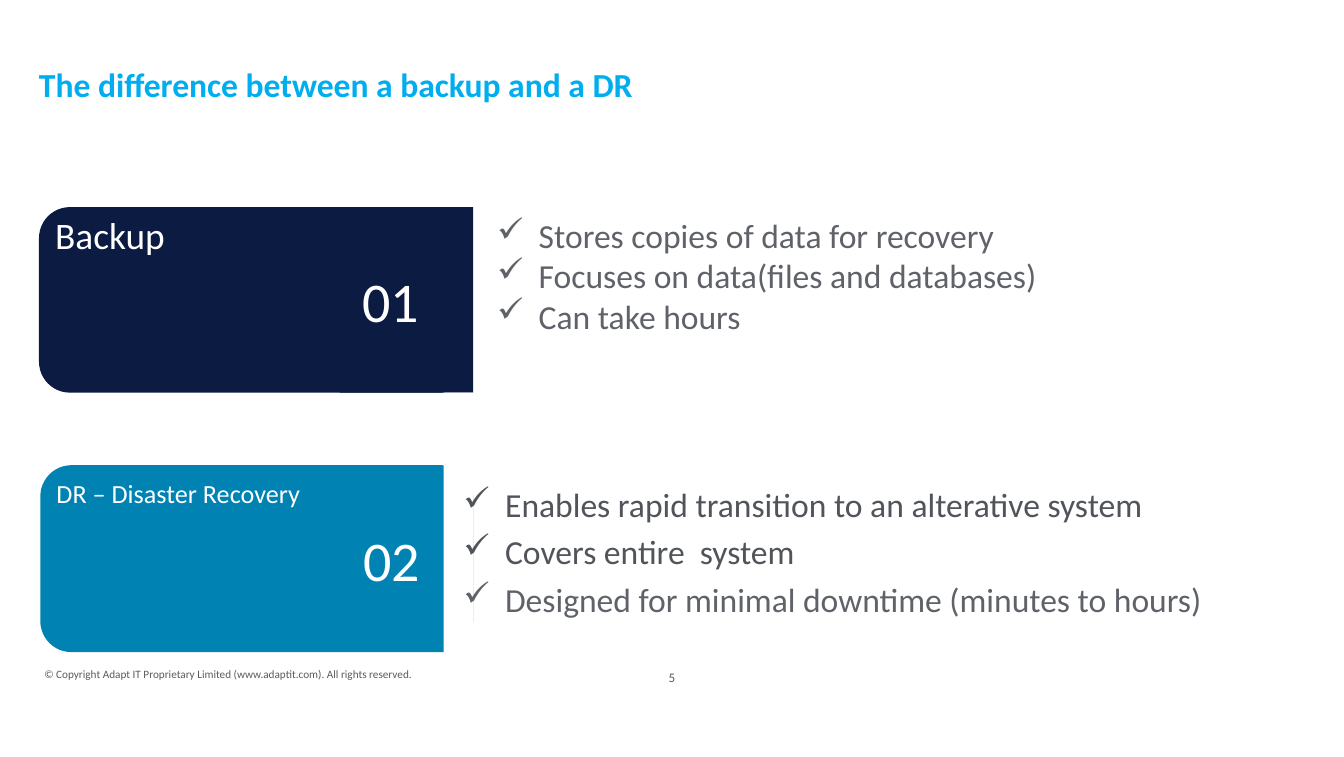
from dataclasses import dataclass

import lxml.etree
import pptx
import pptx.dml.color
import pptx.enum.shapes
import pptx.enum.text
import pptx.oxml.ns
import pptx.slide
import pptx.util

Inches = pptx.util.Inches
RGBColor = pptx.dml.color.RGBColor
Shape = pptx.enum.shapes.MSO_SHAPE
Align = pptx.enum.text.PP_ALIGN
Anchor = pptx.enum.text.MSO_ANCHOR

NAVY = RGBColor(0x0B, 0x1B, 0x42)
TEAL = RGBColor(0x00, 0x83, 0xB3)
SKY = RGBColor(0x00, 0xAE, 0xEF)
WHITE = RGBColor(0xFF, 0xFF, 0xFF)
SLATE = RGBColor(0x51, 0x55, 0x5B)
GREY = RGBColor(0x5F, 0x63, 0x69)
FOOTER_GREY = RGBColor(0x58, 0x5C, 0x5E)

FONT = "Calibri"
HANGING = Inches(0.31)


@dataclass
class Box:
    left: float
    top: float
    width: float
    height: float

    def lengths(self) -> list:
        return [Inches(n) for n in (self.left, self.top, self.width, self.height)]


@dataclass
class Line:
    text: str
    size: float
    color: RGBColor
    bold: bool = False


@dataclass
class Card:
    """A coloured panel with a heading, a number and a checklist."""
    panel: Box
    color: RGBColor
    heading: Line
    number: str
    checklist_box: Box
    checklist: list[Line]
    spacing: dict


def add_panel(slide: pptx.slide.Slide, kind: Shape, box: Box, color: RGBColor):
    panel = slide.shapes.add_shape(kind, *box.lengths())
    panel.shadow.inherit = False
    panel.fill.solid()
    panel.fill.fore_color.rgb = color
    panel.line.fill.background()
    return panel


def write_line(paragraph, line: Line, paragraph_format: dict) -> None:
    for name, value in paragraph_format.items():
        setattr(paragraph, name, value)
    run = paragraph.add_run()
    run.text = line.text
    font_format = {"name": FONT, "size": pptx.util.Pt(line.size), "bold": line.bold}
    for name, value in font_format.items():
        setattr(run.font, name, value)
    run.font.color.rgb = line.color


def add_label(slide: pptx.slide.Slide, box: Box, line: Line, **paragraph_format) -> None:
    frame = slide.shapes.add_textbox(*box.lengths()).text_frame
    frame_format = {"word_wrap": True, "vertical_anchor": Anchor.MIDDLE,
                    "margin_left": 0, "margin_top": 0,
                    "margin_right": 0, "margin_bottom": 0}
    for name, value in frame_format.items():
        setattr(frame, name, value)
    write_line(frame.paragraphs[0], line, paragraph_format)


def add_checklist(slide: pptx.slide.Slide, box: Box, lines: list[Line], spacing: dict) -> None:
    frame = slide.shapes.add_textbox(*box.lengths()).text_frame
    frame.word_wrap = True
    for index, line in enumerate(lines):
        paragraph = frame.add_paragraph() if index else frame.paragraphs[0]
        properties = paragraph._p.get_or_add_pPr()
        properties.set("marL", str(HANGING))
        properties.set("indent", str(-HANGING))
        bullet = lxml.etree.SubElement(properties, pptx.oxml.ns.qn("a:buChar"))
        bullet.set("char", "✓")
        write_line(paragraph, line, {"alignment": Align.JUSTIFY, **spacing})


def add_card(slide: pptx.slide.Slide, card: Card) -> None:
    left, top = card.panel.left, card.panel.top
    add_panel(slide, Shape.ROUNDED_RECTANGLE, card.panel, card.color)
    add_label(slide, Box(left + 0.12, top + 0.09, 1.82, 0.23), card.heading)
    add_label(slide, Box(left + 2.38, top + 0.56, 0.47, 0.27),
              Line(card.number, 30, WHITE), alignment=Align.CENTER)


def main() -> None:
    presentation = pptx.Presentation()
    presentation.slide_width = Inches(10)
    presentation.slide_height = Inches(5.63)
    slide = presentation.slides.add_slide(presentation.slide_layouts[6])

    backup = Card(
        Box(0.29, 1.54, 3.22, 1.38), NAVY, Line("Backup", 20, WHITE), "01",
        Box(3.6, 1.55, 6.11, 1.31),
        [Line("Stores copies of data for recovery", 18, GREY),
         Line("Focuses on data(files and databases)", 18, GREY),
         Line("Can take hours", 18, GREY)],
        {})
    recovery = Card(
        Box(0.3, 3.46, 3.22, 1.39), TEAL, Line("DR – Disaster Recovery", 14, WHITE), "02",
        Box(3.35, 3.58, 6.11, 1.09),
        [Line("Enables rapid transition to an alterative system", 18, SLATE),
         Line("Covers entire  system", 18, SLATE),
         Line("Designed for minimal downtime (minutes to hours)", 18, GREY)],
        {"line_spacing": 0.9, "space_after": pptx.util.Pt(6)})

    # Footer
    add_label(slide, Box(0.33, 4.78, 3.45, 0.46),
              Line("© Copyright Adapt IT Proprietary Limited (www.adaptit.com). "
                   "All rights reserved.", 6, FOOTER_GREY))
    add_label(slide, Box(4.31, 4.78, 1.38, 0.52), Line("5", 7, FOOTER_GREY),
              alignment=Align.CENTER)

    # Title
    add_label(slide, Box(0.29, 0.35, 9.33, 0.53),
              Line("The difference between a backup and a DR", 18, SKY, bold=True),
              line_spacing=pptx.util.Pt(22.6))

    # Square right end of the backup panel, pointing left
    panel_end = add_panel(slide, Shape.PENTAGON, Box(1.84, 1.54, 1.68, 1.38), NAVY)
    panel_end._element.spPr.xfrm.set("flipH", "1")

    # Cards
    for card in (backup, recovery):
        add_card(slide, card)

    # White strip that trims the recovery panel's right end
    add_panel(slide, Shape.RECTANGLE, Box(3.3, 2.92, 0.22, 2.04), WHITE)

    # Checklists
    for card in (backup, recovery):
        add_checklist(slide, card.checklist_box, card.checklist, card.spacing)

    presentation.save("out.pptx")


if __name__ == "__main__":
    main()
